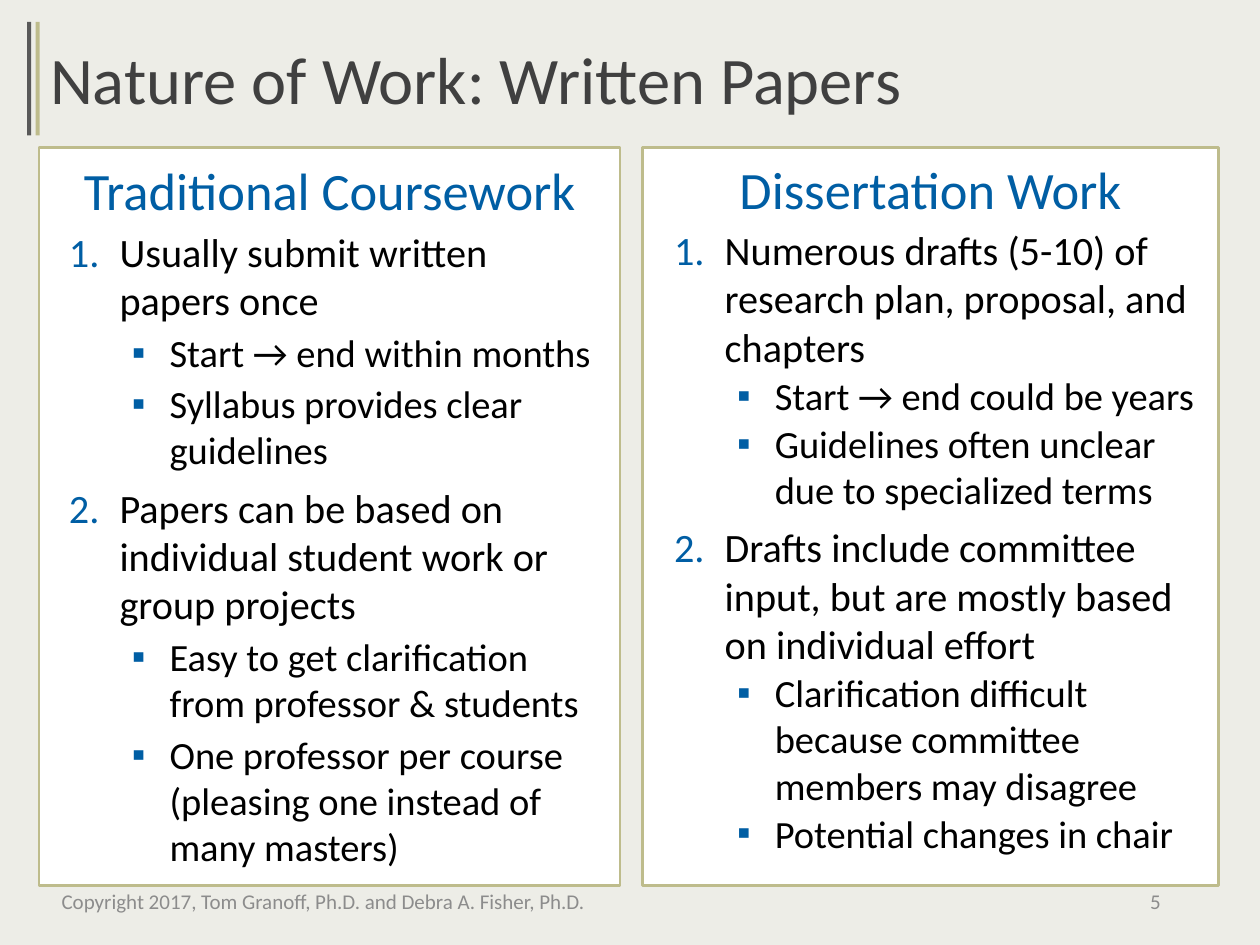
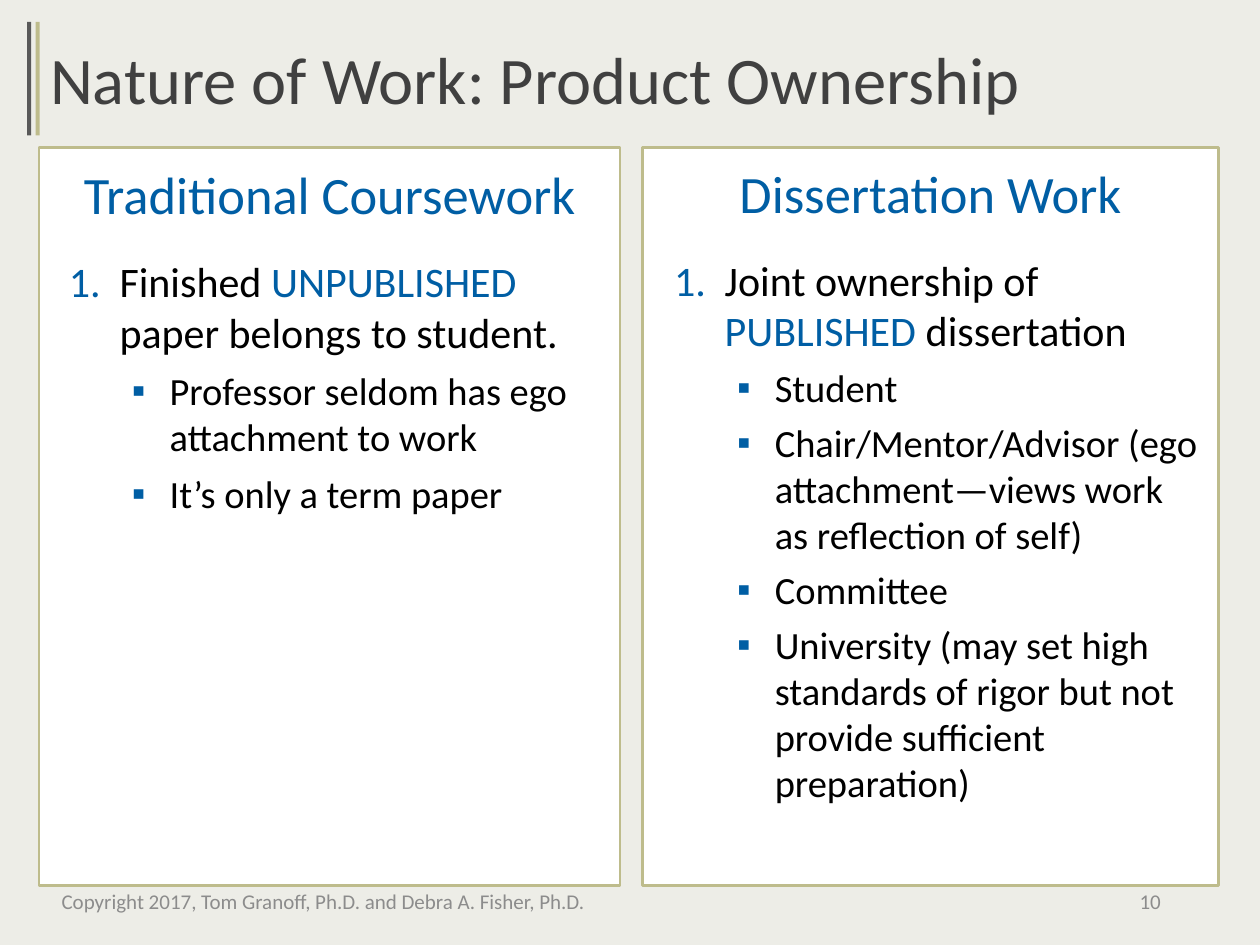
import pptx
import pptx.util
import pptx.dml.color
import pptx.enum.shapes
import pptx.enum.text
import pptx.oxml.ns
import lxml.etree

Cm, Pt = pptx.util.Cm, pptx.util.Pt
RGBColor = pptx.dml.color.RGBColor
ALIGN = pptx.enum.text.PP_ALIGN
ANCHOR = pptx.enum.text.MSO_ANCHOR

# Content: level 0 is numbered, level 1 is bulleted, *stars* mark highlighted words
FOOTER = "Copyright 2017, Tom Granoff, Ph.D. and Debra A. Fisher, Ph.D."
HEADINGS = ("Traditional Coursework", "Dissertation Work")
SLIDES = [
    {
        "title": "Nature of Work: Written Papers", "number": 5,
        "heading_top": 3.07, "body_top": 4.45, "point_size": 23,
        "columns": [
            {"height": 13.34, "bullet_gap": 3, "items": [
                (0, "Usually submit written papers once"),
                (1, "Start → end within months"),
                (1, "Syllabus provides clear guidelines"),
                (0, "Papers can be based on individual student work or group projects"),
                (1, "Easy to get clarification from professor & students"),
                (1, "One professor per course (pleasing one instead of many masters)"),
            ]},
            {"height": 13.39, "bullet_gap": 1, "items": [
                (0, "Numerous drafts (5-10) of research plan, proposal, and chapters"),
                (1, "Start → end could be years"),
                (1, "Guidelines often unclear due to specialized terms"),
                (0, "Drafts include committee input, but are mostly based on individual effort"),
                (1, "Clarification difficult because committee members may disagree"),
                (1, "Potential changes in chair"),
            ]},
        ],
    },
    {
        "title": "Nature of Work: Product Ownership", "number": 10,
        "heading_top": 3.15, "body_top": 5.03, "point_size": 24,
        "columns": [
            {"height": 5.56, "bullet_gap": 6, "items": [
                (0, "Finished *UNPUBLISHED *paper belongs to student."),
                (1, "Professor seldom has ego attachment to work"),
                (1, "It’s only a term paper"),
            ]},
            {"height": 11.48, "bullet_gap": 5, "items": [
                (0, "Joint ownership of *PUBLISHED* dissertation"),
                (1, "Student"),
                (1, "Chair/Mentor/Advisor (ego attachment—views work as reflection of self)"),
                (1, "Committee"),
                (1, "University (may set high standards of rigor but not provide "
                    "sufficient preparation)"),
            ]},
        ],
    },
]

# Shared look
FONT = "Calibri"
PAPER = RGBColor(0xED, 0xED, 0xE7)
WHITE = RGBColor(0xFF, 0xFF, 0xFF)
BLACK = RGBColor(0x00, 0x00, 0x00)
TITLE_GREY = RGBColor(0x40, 0x40, 0x40)
BAR_GREY = RGBColor(0x59, 0x59, 0x59)
FOOTER_GREY = RGBColor(0x8C, 0x8C, 0x8C)
KHAKI = RGBColor(0xBE, 0xBC, 0x8C)
BLUE = RGBColor(0x00, 0x5E, 0xA4)

# Left and width in cm; the right column's text sits slightly higher
COLUMNS = [
    {"panel": (0.79, 11.71), "heading": (1.14, 11.02), "body": (1.14, 11.2), "rise": 0},
    {"panel": (12.95, 11.61), "heading": (13.31, 10.9), "body": (13.34, 11.05), "rise": 0.03},
]
PANEL_TOP, PANEL_HEIGHT = 2.97, 14.88
FOOTER_TOP, FOOTER_HEIGHT = 17.65, 1.02
BULLET_SIZE, POINT_GAP = 22, 6
INDENTS = [(1.02, 1.02), (2.03, 0.76)]  # text margin and hanging part, by level


def add_block(page, left, top, width, height, fill, line=None):
    block = page.shapes.add_shape(pptx.enum.shapes.MSO_SHAPE.RECTANGLE,
                                  Cm(left), Cm(top), Cm(width), Cm(height))
    block.shadow.inherit = False
    block.fill.solid()
    block.fill.fore_color.rgb = fill
    if line is None:
        block.line.fill.background()
    else:
        block.line.color.rgb = line
        block.line.width = Pt(1.5)


def add_box(page, left, top, width, height, anchor=ANCHOR.TOP):
    box = page.shapes.add_textbox(Cm(left), Cm(top), Cm(width), Cm(height))
    box.text_frame.word_wrap = True
    box.text_frame.vertical_anchor = anchor
    return box.text_frame


def write(para, text, size, color=BLACK, align=ALIGN.LEFT):
    """Fill a paragraph, colouring the words between stars blue."""
    para.alignment = align
    for index, part in enumerate(text.split("*")):
        if part:
            span = para.add_run()
            span.text = part
            span.font.name = FONT
            span.font.size = Pt(size)
            span.font.color.rgb = BLUE if index % 2 else color


def add_marker(para, level):
    """Number a main point or bullet a sub-point, with a hanging indent."""
    margin, hanging = INDENTS[level]
    para.level = level
    props = para._p.get_or_add_pPr()
    props.set("marL", str(Cm(margin)))
    props.set("indent", str(-Cm(hanging)))

    def add(parent, tag, **attributes):
        return lxml.etree.SubElement(parent, pptx.oxml.ns.qn(tag), **attributes)

    add(add(props, "a:buClr"), "a:srgbClr", val=str(BLUE))
    if level == 0:
        add(props, "a:buFont", typeface=FONT)
        add(props, "a:buAutoNum", type="arabicPeriod")
    else:
        add(props, "a:buFont", typeface="Arial")
        add(props, "a:buChar", char="▪")


def add_list(frame, items, point_size, bullet_gap):
    for index, (level, text) in enumerate(items):
        para = frame.add_paragraph() if index else frame.paragraphs[0]
        write(para, text, BULLET_SIZE if level else point_size)
        if index:
            para.space_before = Pt(bullet_gap if level else POINT_GAP)
        add_marker(para, level)


def build_page(deck, content):
    page = deck.slides.add_slide(deck.slide_layouts[6])
    page.background.fill.solid()
    page.background.fill.fore_color.rgb = PAPER

    # Title with its two upright bars
    title = add_box(page, 0.76, 0.64, 23.19, 1.88)
    write(title.paragraphs[0], content["title"], 38, TITLE_GREY)
    for left, color in ((0.55, BAR_GREY), (0.72, KHAKI)):
        add_block(page, left, 0.44, 0.08, 2.29, color)

    # Two comparison panels
    for place, heading, column in zip(COLUMNS, HEADINGS, content["columns"]):
        left, width = place["panel"]
        add_block(page, left, PANEL_TOP, width, PANEL_HEIGHT, WHITE, KHAKI)
        left, width = place["heading"]
        frame = add_box(page, left, content["heading_top"] - place["rise"], width, 1.55)
        write(frame.paragraphs[0], heading, 30, BLUE, ALIGN.CENTER)
        left, width = place["body"]
        frame = add_box(page, left, content["body_top"] - place["rise"], width,
                        column["height"])
        add_list(frame, column["items"], content["point_size"], column["bullet_gap"])

    # Footer and page number
    for left, width, text, align in ((0.97, 11.1, FOOTER, ALIGN.CENTER),
                                     (17.93, 5.72, str(content["number"]), ALIGN.RIGHT)):
        frame = add_box(page, left, FOOTER_TOP, width, FOOTER_HEIGHT, ANCHOR.MIDDLE)
        write(frame.paragraphs[0], text, 12, FOOTER_GREY, align)


def main():
    deck = pptx.Presentation()
    deck.slide_width, deck.slide_height = Cm(25.4), Cm(19.05)
    for content in SLIDES:
        build_page(deck, content)
    deck.save("out.pptx")


if __name__ == "__main__":
    main()
